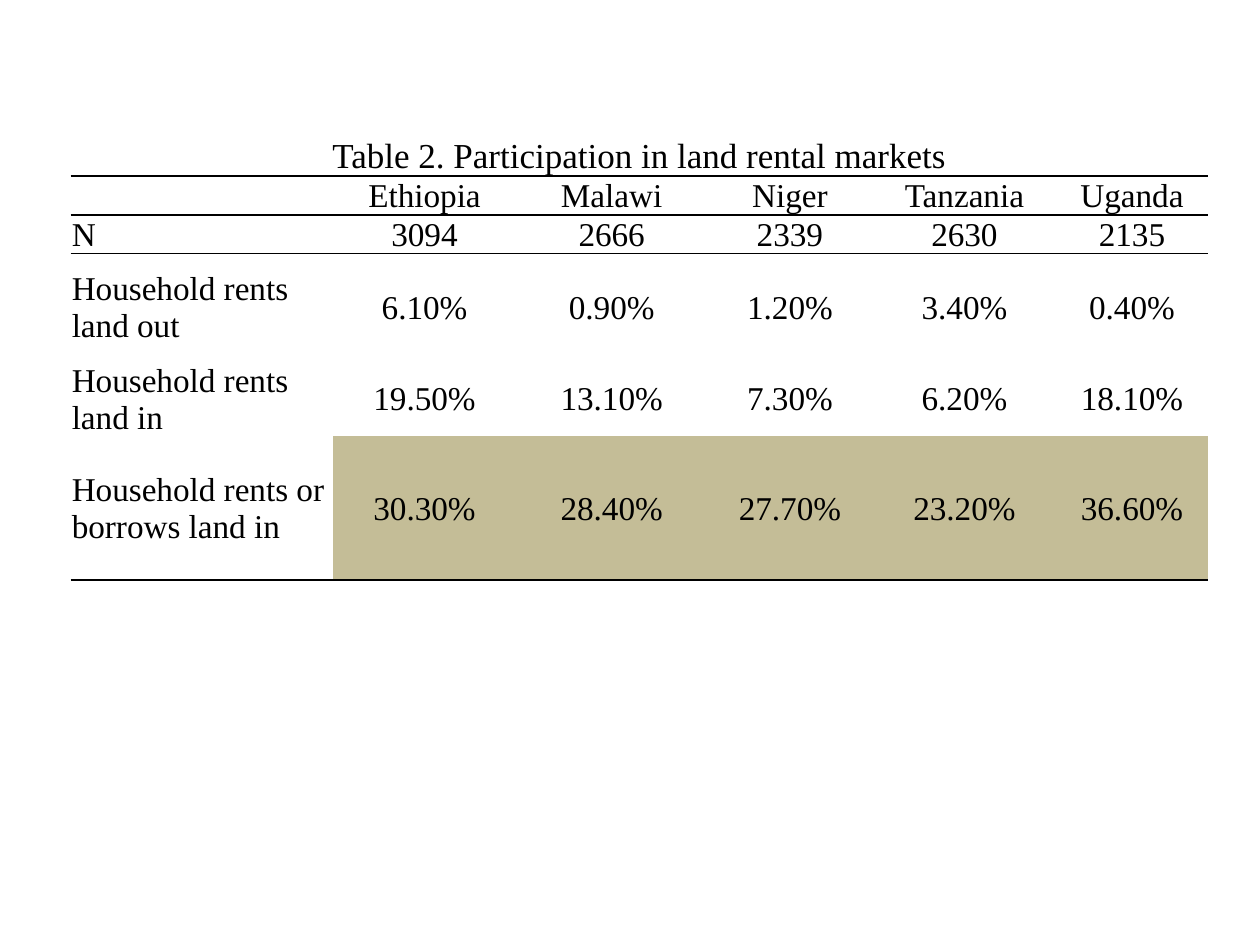
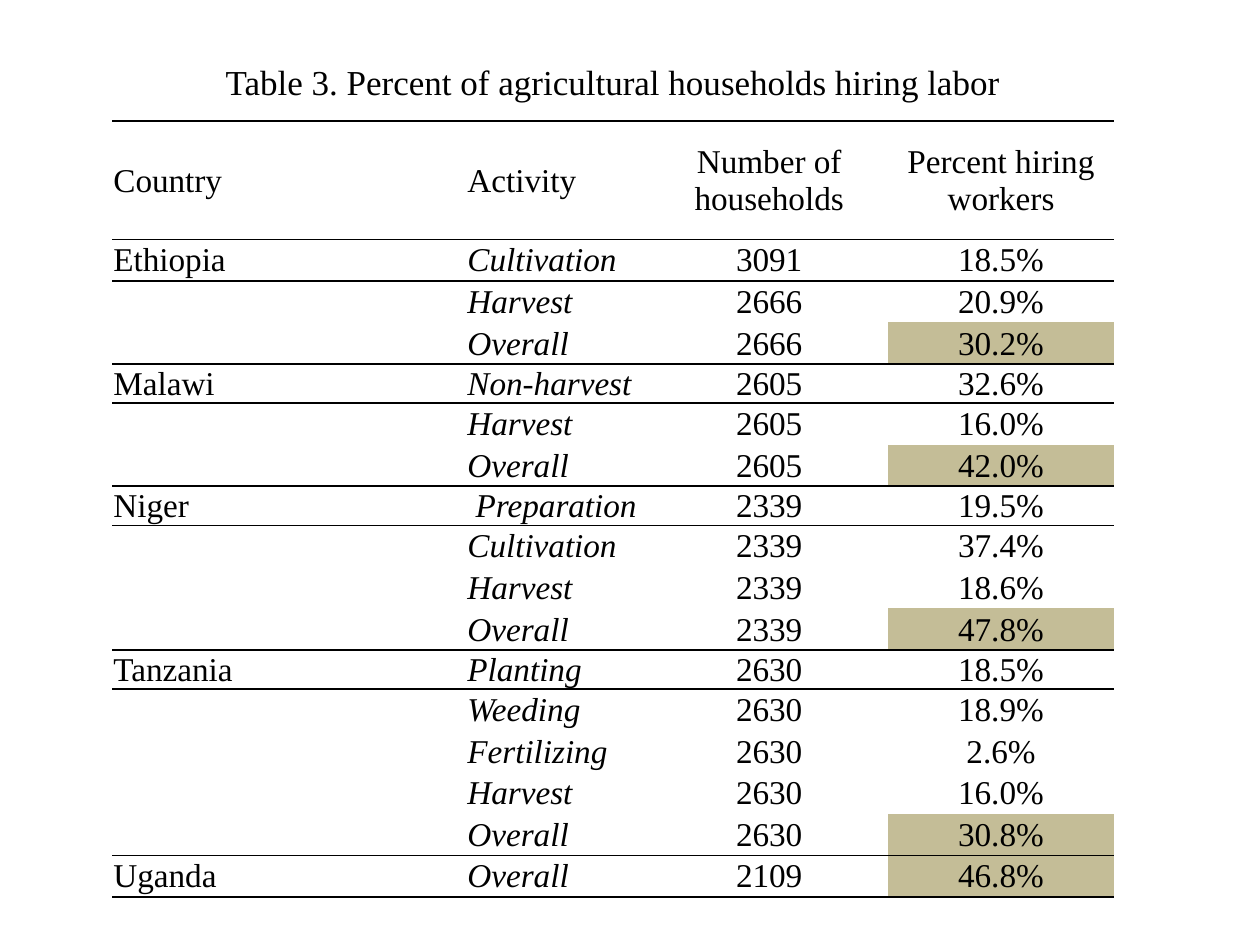
"""Build two slides of household survey tables on land rental and hired labor."""
import lxml.etree
import pptx
import pptx.dml.color
import pptx.enum.text
import pptx.oxml.ns
import pptx.util

Inches = pptx.util.Inches
Pt = pptx.util.Pt
BLACK = pptx.dml.color.RGBColor(0x00, 0x00, 0x00)
TAN = pptx.dml.color.RGBColor(0xC4, 0xBD, 0x97)
FONT = "Times New Roman"
CAPTION_SIZE, CELL_SIZE = Pt(20), Pt(19)
PLAIN_TABLE_STYLE = "{2D5ABB26-0587-4C30-8999-92F81FD0307C}"

RENTAL_CAPTION = "Table 2. Participation in land rental markets"
RENTAL_ROWS = [
    ("", "Ethiopia", "Malawi", "Niger", "Tanzania", "Uganda"),
    ("N", "3094", "2666", "2339", "2630", "2135"),
    ("Household rents land out", "6.10%", "0.90%", "1.20%", "3.40%", "0.40%"),
    ("Household rents land in", "19.50%", "13.10%", "7.30%", "6.20%", "18.10%"),
    ("Household rents or borrows land in", "30.30%", "28.40%", "27.70%", "23.20%", "36.60%"),
]
RENTAL_WIDTHS = [2.08, 1.46, 1.51, 1.32, 1.45, 1.21]
RENTAL_HEIGHTS = [0.31, 0.31, 0.3, 0.86, 0.58, 1.14]

LABOR_CAPTION = "Table 3. Percent of agricultural households hiring labor"
LABOR_HEADER = ("Country", "Activity", "Number of households", "Percent hiring workers")
LABOR_GROUPS = {
    "Ethiopia": [("Cultivation", "3091", "18.5%"), ("Harvest", "2666", "20.9%"),
                 ("Overall", "2666", "30.2%")],
    "Malawi": [("Non-harvest", "2605", "32.6%"), ("Harvest", "2605", "16.0%"),
               ("Overall", "2605", "42.0%")],
    "Niger": [(" Preparation", "2339", "19.5%"), ("Cultivation", "2339", "37.4%"),
              ("Harvest", "2339", "18.6%"), ("Overall", "2339", "47.8%")],
    "Tanzania": [("Planting", "2630", "18.5%"), ("Weeding", "2630", "18.9%"),
                 ("Fertilizing", "2630", "2.6%"), ("Harvest", "2630", "16.0%"),
                 ("Overall", "2630", "30.8%")],
    "Uganda": [("Overall", "2109", "46.8%")],
}
LABOR_WIDTHS = [2.81, 1.46, 1.89, 1.79]
CAPTION_HEIGHT, HEADER_HEIGHT, ACTIVITY_HEIGHT, COUNTRY_HEIGHT = 0.61, 0.94, 0.33, 0.31
COMPACT_COUNTRIES = ("Malawi", "Niger", "Tanzania")


def add_border(cell, side):
    properties = cell._tc.get_or_add_tcPr()
    line = lxml.etree.SubElement(properties, pptx.oxml.ns.qn(f"a:ln{side}"), w=str(Pt(1)))
    fill = lxml.etree.SubElement(line, pptx.oxml.ns.qn("a:solidFill"))
    lxml.etree.SubElement(fill, pptx.oxml.ns.qn("a:srgbClr"), val=str(BLACK))


def format_cell(cell, text, size, centred, italic=False):
    cell.text = text
    cell.margin_left = cell.margin_right = cell.margin_top = Inches(0.01)
    cell.margin_bottom = 0
    cell.vertical_anchor = pptx.enum.text.MSO_ANCHOR.MIDDLE
    paragraph = cell.text_frame.paragraphs[0]
    alignment = pptx.enum.text.PP_ALIGN
    paragraph.alignment = alignment.CENTER if centred else alignment.LEFT
    paragraph.font.name = FONT
    paragraph.font.size = size
    paragraph.font.italic = italic
    paragraph.font.color.rgb = BLACK


def add_ruled_table(presentation, left, top, caption, rows, widths, heights,
                    ruled_rows, shaded_cells, text_columns=1, italic_column=None):
    slide = presentation.slides.add_slide(presentation.slide_layouts[6])
    frame = slide.shapes.add_table(len(heights), len(widths), Inches(left), Inches(top),
                                   Inches(sum(widths)), Inches(sum(heights)))
    table = frame.table
    table.first_row = table.horz_banding = False
    table._tbl.tblPr.find(pptx.oxml.ns.qn("a:tableStyleId")).text = PLAIN_TABLE_STYLE
    for column, width in zip(table.columns, widths):
        column.width = Inches(width)
    for row, height in zip(table.rows, heights):
        row.height = Inches(height)

    table.cell(0, 0).merge(table.cell(0, len(widths) - 1))
    format_cell(table.cell(0, 0), caption, CAPTION_SIZE, centred=True)
    for row_index, values in enumerate(rows, start=1):
        for column_index, value in enumerate(values):
            format_cell(table.cell(row_index, column_index), value, CELL_SIZE,
                        centred=column_index >= text_columns,
                        italic=row_index > 1 and column_index == italic_column)

    for row_index in range(len(heights)):
        for column_index in range(len(widths)):
            cell = table.cell(row_index, column_index)
            if row_index - 1 in ruled_rows:
                add_border(cell, "T")
            if row_index in ruled_rows:
                add_border(cell, "B")
            if (row_index, column_index) in shaded_cells:
                cell.fill.solid()
                cell.fill.fore_color.rgb = TAN
            else:
                cell.fill.background()


def add_rental_slide(presentation):
    last_row = len(RENTAL_ROWS)
    shaded_cells = {(last_row, column) for column in range(1, len(RENTAL_WIDTHS))}
    add_ruled_table(presentation, 0.56, 1.08, RENTAL_CAPTION, RENTAL_ROWS, RENTAL_WIDTHS,
                    RENTAL_HEIGHTS, {0, 1, last_row}, shaded_cells)


def add_labor_slide(presentation):
    rows = [LABOR_HEADER]
    heights = [CAPTION_HEIGHT, HEADER_HEIGHT]
    overall_rows = set()
    for country, activities in LABOR_GROUPS.items():
        for index, activity in enumerate(activities):
            rows.append((country if index == 0 else "", *activity))
            compact = index == 0 and country in COMPACT_COUNTRIES
            heights.append(COUNTRY_HEIGHT if compact else ACTIVITY_HEIGHT)
        overall_rows.add(len(rows))
    shaded_cells = {(row, len(LABOR_WIDTHS) - 1) for row in overall_rows}
    add_ruled_table(presentation, 0.89, 0.35, LABOR_CAPTION, rows, LABOR_WIDTHS, heights,
                    {0, 1} | overall_rows, shaded_cells, text_columns=2, italic_column=1)


def main():
    presentation = pptx.Presentation()
    presentation.slide_width = Inches(10)
    presentation.slide_height = Inches(7.5)
    add_rental_slide(presentation)
    add_labor_slide(presentation)
    presentation.save("out.pptx")


if __name__ == "__main__":
    main()
